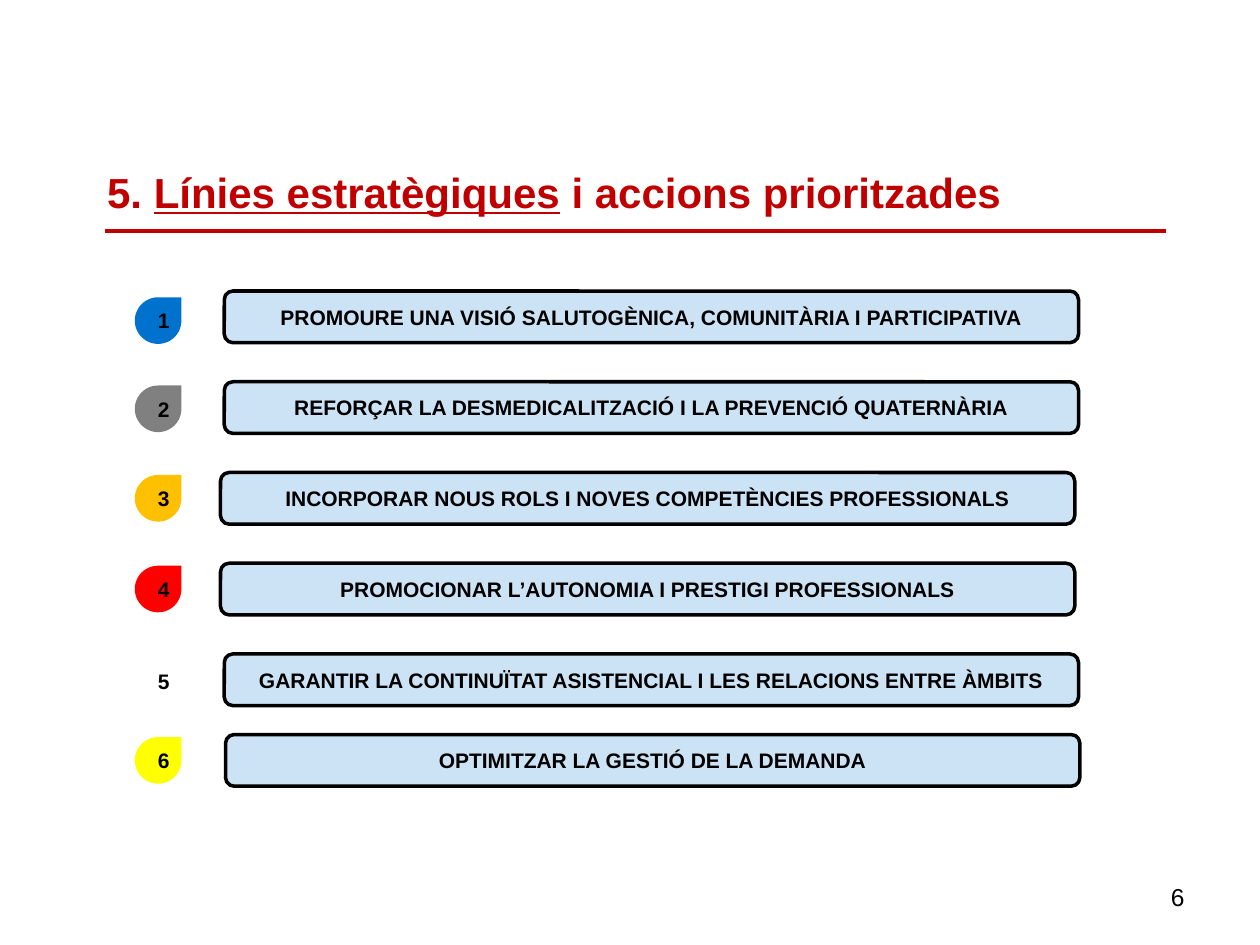
import pptx
import pptx.util
from lxml import etree
from pptx.dml.color import RGBColor
from pptx.enum.shapes import MSO_CONNECTOR, MSO_SHAPE
from pptx.enum.text import MSO_ANCHOR, MSO_AUTO_SIZE, PP_ALIGN
from pptx.oxml.ns import qn
from pptx.util import Inches, Pt

RED = RGBColor(0xC0, 0x00, 0x00)
BLACK = RGBColor(0x00, 0x00, 0x00)
PALE_BLUE = RGBColor(0xCC, 0xE3, 0xF5)

# Content: title runs as (text, underlined)
TITLE = [("5. ", False), ("Línies estratègiques", True), (" i accions prioritzades", False)]
PAGE_NUMBER = "6"

# Strategic lines: text, drop colour, bar left, bar top, drop top
STRATEGIES = [
    ("PROMOURE UNA VISIÓ SALUTOGÈNICA, COMUNITÀRIA I PARTICIPATIVA",
     RGBColor(0x00, 0x72, 0xCE), 1.78, 2.31, 2.36),
    ("REFORÇAR LA DESMEDICALITZACIÓ I LA PREVENCIÓ QUATERNÀRIA",
     RGBColor(0x80, 0x80, 0x80), 1.78, 3.03, 3.06),
    ("INCORPORAR NOUS ROLS I NOVES COMPETÈNCIES PROFESSIONALS",
     RGBColor(0xFF, 0xC0, 0x00), 1.75, 3.75, 3.77),
    ("PROMOCIONAR L’AUTONOMIA I PRESTIGI PROFESSIONALS",
     RGBColor(0xFF, 0x00, 0x00), 1.75, 4.47, 4.49),
    ("GARANTIR LA CONTINUÏTAT ASISTENCIAL I LES RELACIONS ENTRE ÀMBITS",
     RGBColor(0xFF, 0xFF, 0xFF), 1.78, 5.19, 5.22),
    ("OPTIMITZAR LA GESTIÓ DE LA DEMANDA",
     RGBColor(0xFF, 0xFF, 0x00), 1.79, 5.83, 5.85),
]
BAR_WIDTH, BAR_HEIGHT = 6.78, 0.41
DROP_LEFT, DROP_SIZE, DROP_INSET = 1.07, 0.37, 0.13


def style(para, size, color, bold, align):
    para.alignment = align
    para.font.name = "Arial"
    para.font.size = Pt(size)
    para.font.bold = bold
    para.font.color.rgb = color


def add_label(page, kind, text, fill, left, top, width, height):
    shape = page.shapes.add_shape(
        kind, Inches(left), Inches(top), Inches(width), Inches(height))
    shape.shadow.inherit = False
    shape.fill.solid()
    shape.fill.fore_color.rgb = fill
    shape.line.fill.background()
    frame = shape.text_frame
    frame.word_wrap = True
    frame.vertical_anchor = MSO_ANCHOR.MIDDLE
    frame.text = text
    style(frame.paragraphs[0], 12, BLACK, True, PP_ALIGN.CENTER)
    return shape


deck = pptx.Presentation()
deck.slide_width, deck.slide_height = Inches(10), Inches(7.5)
page = deck.slides.add_slide(deck.slide_layouts[5])

# Title and its rule
title = page.shapes.title
title.left, title.top = Inches(0.75), Inches(0.67)
title.width, title.height = Inches(8.5), Inches(1.1)
title.text_frame.auto_size = MSO_AUTO_SIZE.NONE
title.text_frame.vertical_anchor = MSO_ANCHOR.BOTTOM
para = title.text_frame.paragraphs[0]
for text, underlined in TITLE:
    span = para.add_run()
    span.text = text
    span.font.underline = underlined
style(para, 24, RED, True, PP_ALIGN.LEFT)

rule = page.shapes.add_connector(
    MSO_CONNECTOR.STRAIGHT, Inches(0.83), Inches(1.83), Inches(9.25), Inches(1.83))
rule.line.color.rgb = RED
rule.line.width = Pt(2.25)
etree.SubElement(rule._element.spPr, qn("a:effectLst"))

# Page number
box = page.shapes.add_textbox(Inches(7.17), Inches(6.95), Inches(2.33), Inches(0.4))
box.text_frame.word_wrap = True
box.text_frame.text = PAGE_NUMBER
style(box.text_frame.paragraphs[0], 14, BLACK, False, PP_ALIGN.RIGHT)

# Numbered strategic lines
for number, (text, color, bar_left, bar_top, drop_top) in enumerate(STRATEGIES, 1):
    bar = add_label(page, MSO_SHAPE.ROUNDED_RECTANGLE, text, PALE_BLUE,
                    bar_left, bar_top, BAR_WIDTH, BAR_HEIGHT)
    bar.line.color.rgb = BLACK
    bar.line.width = Pt(2)

    drop = add_label(page, MSO_SHAPE.TEAR, str(number), color,
                     DROP_LEFT, drop_top, DROP_SIZE, DROP_SIZE)
    frame = drop.text_frame
    frame.margin_left = frame.margin_right = Inches(DROP_INSET)
    frame.margin_top = frame.margin_bottom = Inches(DROP_INSET)

deck.save("out.pptx")
